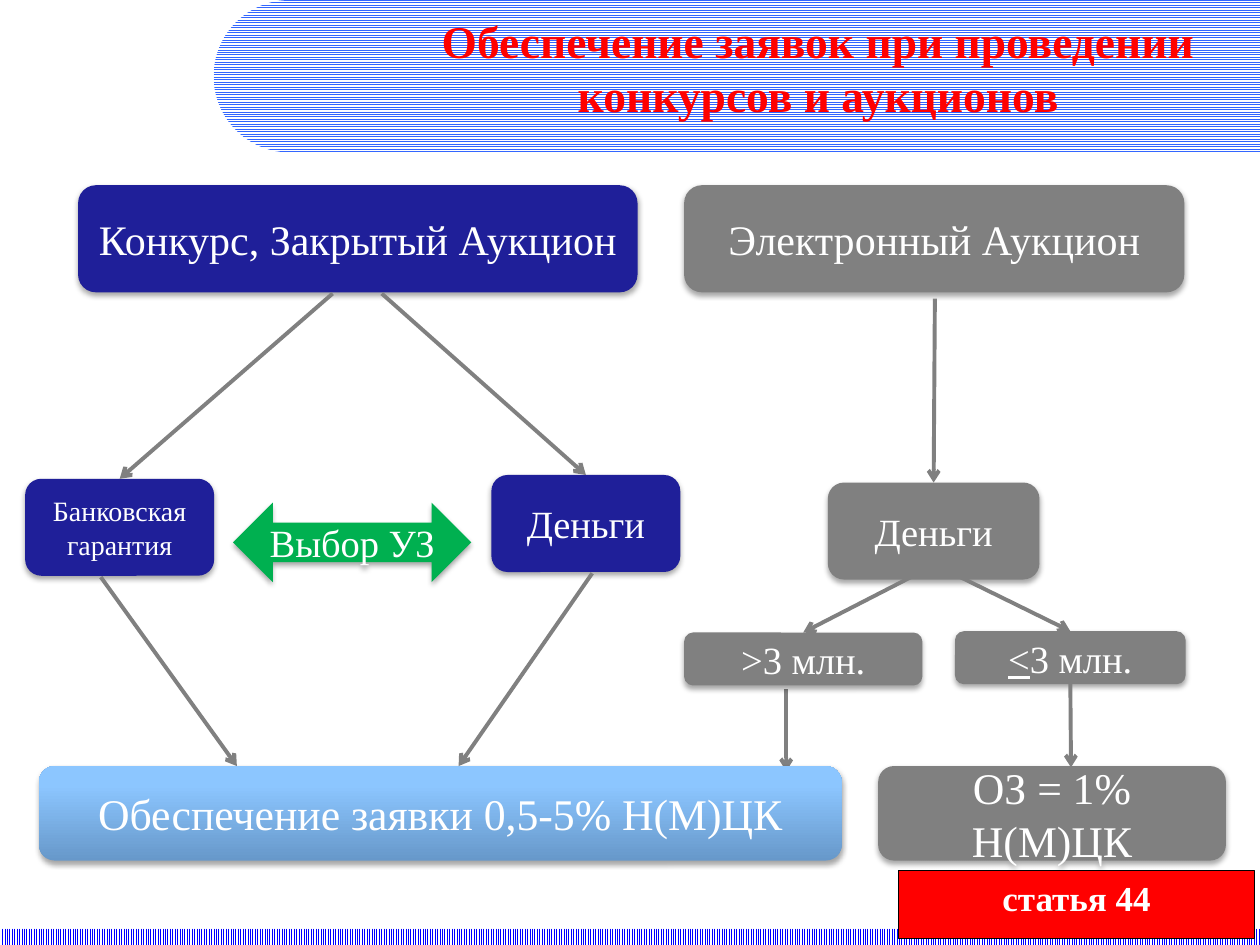
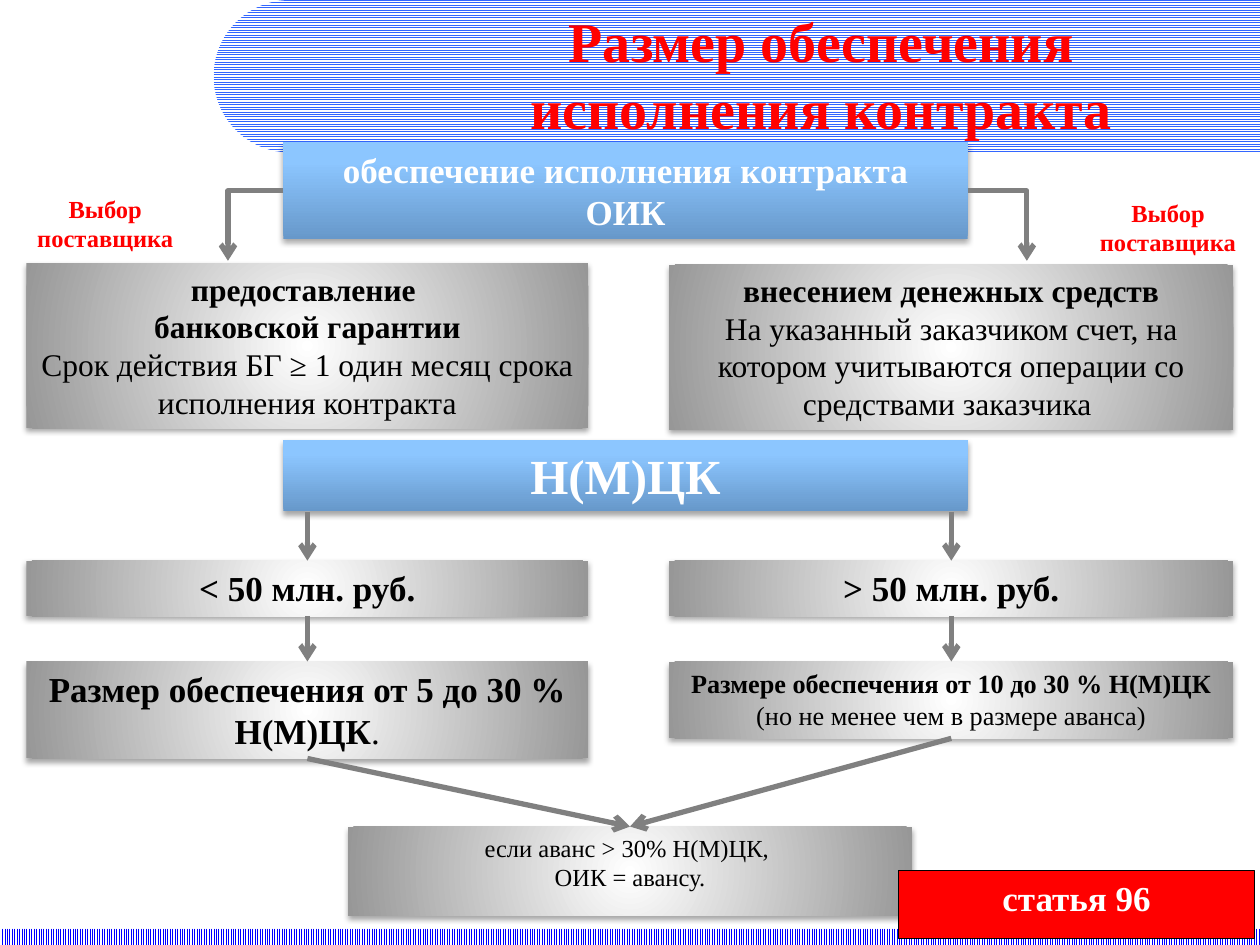
from math import cos, pi, sin

from lxml.etree import SubElement
from pptx import Presentation
from pptx.dml.color import RGBColor
from pptx.enum.dml import MSO_PATTERN
from pptx.enum.shapes import MSO_CONNECTOR, MSO_SHAPE
from pptx.enum.text import MSO_ANCHOR, MSO_AUTO_SIZE, PP_ALIGN
from pptx.oxml import parse_xml
from pptx.oxml.ns import nsdecls, qn
from pptx.util import Inches, Pt

FONT = "Times New Roman"
WHITE, BLACK, RED, GRAY = "FFFFFF", "000000", "FF0000", "808080"
NAVY, GREEN = "1F1F99", "00B050"
SKY = ([(0, "6798CA"), (80, "8CC6FF"), (100, "8EC7FF")], '<a:lin ang="16200000" scaled="0"/>')
SILVER = (
    [(0, WHITE), (100, "979797")],
    '<a:path path="circle"><a:fillToRect l="50000" t="50000" r="50000" b="50000"/></a:path>',
)
BOTTOM, TOP, LEFT, RIGHT = 2, 0, 1, 3


def rgb(value):
    """Turn a hex string into a colour."""
    return RGBColor.from_string(value)


def write(frame, paragraphs, size=20, color=WHITE, bold=False, anchor=MSO_ANCHOR.TOP):
    """Fill a text frame; a paragraph is a string or a list of (text, font changes)."""
    frame.word_wrap = True
    frame.auto_size = MSO_AUTO_SIZE.NONE
    frame.vertical_anchor = anchor
    for index, content in enumerate(paragraphs):
        para = frame.paragraphs[0] if index == 0 else frame.add_paragraph()
        para.alignment = PP_ALIGN.CENTER
        spans = [(content, {})] if isinstance(content, str) else content
        for text, changes in spans:
            span = para.add_run()
            span.text = text
            span.font.name = FONT
            span.font.size = Pt(size)
            span.font.color.rgb = rgb(color)
            span.font.bold = changes.get("bold", bold)
            span.font.underline = changes.get("underline", False)


class Painter:
    """Holds the deck, its style and the slide being drawn."""

    def __init__(self):
        """Open an empty deck of the right size."""
        self.deck = Presentation()
        self.deck.slide_width = Inches(10)
        self.deck.slide_height = Inches(7.5)
        self.page = None
        self.line_width = Pt(3)

    def new_page(self, title, place, size, line_width):
        """Start a slide with its bands and title."""
        self.page = self.deck.slides.add_slide(self.deck.slide_layouts[5])
        self.line_width = Pt(line_width)
        self.bands()
        heading = self.page.shapes.title
        heading.left, heading.top, heading.width, heading.height = map(Inches, place)
        write(heading.text_frame, [title], size=size, color=RED, bold=True)
        heading.element.getparent().append(heading.element)

    def bands(self):
        """Draw the rounded top band and the bottom strip."""
        radius, center, steps = 0.605, 2.3, 48
        angles = [pi * step / steps for step in range(steps + 1)]
        arc = [(center - radius * sin(a), radius - radius * cos(a)) for a in angles]
        builder = self.page.shapes.build_freeform(Inches(10), 0)
        builder.add_line_segments(
            [(Inches(x), Inches(y)) for x, y in arc + [(10, 2 * radius)]], close=True
        )
        self.hatch(builder.convert_to_shape(), MSO_PATTERN.NARROW_HORIZONTAL, "3366FF")
        strip = self.page.shapes.add_shape(
            MSO_SHAPE.RECTANGLE, 0, Inches(7.37), Inches(10), Inches(0.13)
        )
        self.hatch(strip, MSO_PATTERN.NARROW_VERTICAL, "0000FF")

    def hatch(self, shape, pattern, color):
        """Give a shape a line pattern on white."""
        shape.fill.patterned()
        shape.fill.pattern = pattern
        shape.fill.fore_color.rgb = rgb(color)
        shape.fill.back_color.rgb = rgb(WHITE)
        shape.line.fill.background()
        shape.shadow.inherit = False

    def gradient(self, shape, stops, direction):
        """Fill a shape with colour stops along a direction."""
        marks = "".join(
            f'<a:gs pos="{place * 1000}"><a:srgbClr val="{color}"/></a:gs>'
            for place, color in stops
        )
        shape.element.spPr.insert(2, parse_xml(
            f'<a:gradFill {nsdecls("a")} rotWithShape="1">'
            f"<a:gsLst>{marks}</a:gsLst>{direction}</a:gradFill>"
        ))

    def drop_shadow(self, shape):
        """Put a soft shadow under a shape."""
        shape.element.spPr.find(qn("a:effectLst")).append(parse_xml(
            f'<a:outerShdw {nsdecls("a")} blurRad="40000" dist="23000" dir="5400000" '
            'rotWithShape="0"><a:srgbClr val="000000"><a:alpha val="35000"/>'
            "</a:srgbClr></a:outerShdw>"
        ))

    def box(self, place, paragraphs, fill, kind=MSO_SHAPE.RECTANGLE, border=None, **style):
        """Draw a filled shape with text and return it."""
        shape = self.page.shapes.add_shape(kind, *map(Inches, place))
        shape.shadow.inherit = False
        if isinstance(fill, str):
            shape.fill.solid()
            shape.fill.fore_color.rgb = rgb(fill)
        else:
            self.gradient(shape, *fill)
        if border:
            shape.line.color.rgb = rgb(border)
            shape.line.width = Pt(0.75)
        else:
            shape.line.fill.background()
            self.drop_shadow(shape)
        write(shape.text_frame, paragraphs, **style)
        return shape

    def round_box(self, place, content, fill, size=22, kind=MSO_SHAPE.ROUNDED_RECTANGLE):
        """Draw a rounded box with one centred paragraph."""
        return self.box(place, [content], fill, kind, size=size, anchor=MSO_ANCHOR.MIDDLE)

    def label(self, place, text):
        """Add a small red caption."""
        caption = self.page.shapes.add_textbox(*map(Inches, place))
        write(caption.text_frame, [text], size=14, color=RED, bold=True)

    def arrow(self, start, end, side=BOTTOM, bent=False):
        """Draw an arrow; each end is a point or a box to join."""
        ends = [point if isinstance(point, tuple) else (0, 0) for point in (start, end)]
        kind = MSO_CONNECTOR.ELBOW if bent else MSO_CONNECTOR.STRAIGHT
        line = self.page.shapes.add_connector(kind, *map(Inches, ends[0] + ends[1]))
        if not isinstance(start, tuple):
            line.begin_connect(start, side)
        if not isinstance(end, tuple):
            line.end_connect(end, TOP)
        properties = line.element.spPr
        if bent:
            properties.find(qn("a:prstGeom")).set("prst", "bentConnector2")
        line.line.color.rgb = rgb(GRAY)
        line.line.width = self.line_width
        SubElement(properties.find(qn("a:ln")), qn("a:tailEnd"), type="arrow")
        SubElement(properties, qn("a:effectLst"))

    def article(self, number):
        """Add the red article tag in the corner."""
        self.box((7.13, 6.91, 2.83, 0.54), [f"статья {number}"], RED, border=BLACK, bold=True)


def draw_bid_security(painter):
    """Draw the slide on bid security."""
    painter.new_page(
        "Обеспечение заявок при проведении конкурсов и аукционов", (3.11, 0.05, 6.77, 0.98), 26, 2.25
    )
    painter.round_box(
        (1.85, 3.99, 1.89, 0.63), "Выбор УЗ", GREEN, kind=MSO_SHAPE.LEFT_RIGHT_ARROW
    )
    painter.arrow((6.24, 5.47), (6.24, 6.12))
    painter.round_box((0.62, 1.47, 4.44, 0.85), "Конкурс, Закрытый Аукцион", NAVY, 24)
    painter.round_box((5.43, 1.47, 3.97, 0.85), "Электронный Аукцион", GRAY, 24)
    guarantee = painter.round_box((0.2, 3.8, 1.5, 0.77), "Банковская гарантия", NAVY, 16)
    tender_money = painter.round_box((3.9, 3.77, 1.5, 0.77), "Деньги", NAVY)
    painter.round_box((0.31, 6.08, 6.37, 0.75), "Обеспечение заявки 0,5-5% Н(М)ЦК", SKY, 25)
    painter.round_box((6.97, 6.08, 2.76, 0.75), "ОЗ = 1% Н(М)ЦК", GRAY, 25)
    above_limit = painter.round_box((5.43, 5.02, 1.89, 0.42), ">3 млн.", GRAY)
    within_limit = painter.round_box(
        (7.58, 5.01, 1.83, 0.42), [("<", {"underline": True}), ("3 млн.", {})], GRAY
    )
    auction_money = painter.round_box((6.57, 3.83, 1.68, 0.77), "Деньги", GRAY)
    for start, end in (
        (within_limit, (8.5, 6.09)),
        ((7.42, 2.37), auction_money),
        ((2.64, 2.33), guarantee),
        ((3.03, 2.33), tender_money),
        ((7.58, 4.56), within_limit),
        ((7.27, 4.56), above_limit),
        ((4.7, 4.55), (3.64, 6.08)),
        ((0.8, 4.58), (1.88, 6.08)),
    ):
        painter.arrow(start, end)
    painter.article(44)


def draw_contract_security(painter):
    """Draw the slide on the size of contract security."""
    painter.new_page("Размер обеспечения исполнения контракта", (3.24, 0, 6.56, 0.99), 32, 3)
    plain = {"bold": False}
    dark = {"color": BLACK, "bold": True}
    left, right = (0.21, 4.46), (5.31, 4.48)

    def column_box(column, top, height, paragraphs, size):
        """Draw a silver box in one of the two columns."""
        x, width = column
        return painter.box((x, top, width, height), paragraphs, SILVER, size=size, **dark)

    security = painter.box(
        (2.25, 1.13, 5.43, 0.77), ["обеспечение исполнения контракта", "ОИК"], SKY, bold=True
    )
    advance = painter.box(
        (2.76, 6.56, 4.48, 0.71), ["если аванс > 30% Н(М)ЦК, ", "ОИК = авансу."],
        SILVER, size=14, color=BLACK,
    )
    painter.box((2.25, 3.49, 5.43, 0.57), ["Н(М)ЦК"], SKY, size=28, bold=True)
    below = column_box(left, 4.45, 0.44, ["< 50 млн. руб."], 20)
    above = column_box(right, 4.45, 0.44, ["> 50 млн. руб."], 20)
    below_size = column_box(
        left, 5.25, 0.77, [[("Размер обеспечения от 5 до 30 % Н(М)ЦК", {}), (".", plain)]], 20
    )
    above_size = column_box(right, 5.25, 0.61, [[
        ("Размере обеспечения от 10 до 30 % Н(М)ЦК ", {}),
        ("(но не менее чем в размере аванса)", plain),
    ]], 15)
    column_box(left, 2.09, 1.31, [
        "предоставление ",
        "банковской гарантии",
        [("Срок действия БГ ≥ 1 один месяц срока исполнения контракта", plain)],
    ], 18)
    column_box(right, 2.1, 1.31, [
        "внесением денежных средств",
        [("На указанный заказчиком счет, на котором учитываются операции со "
          "средствами заказчика ", plain)],
    ], 18)
    painter.arrow(security, (8.15, 2.07), side=RIGHT, bent=True)
    painter.arrow(security, (1.81, 2.07), side=LEFT, bent=True)
    for x, limit, amount in ((2.44, below, below_size), (7.55, above, above_size)):
        painter.arrow((x, 4.06), limit)
        painter.arrow(limit, amount)
        painter.arrow(amount, advance)
    painter.label((8.54, 1.52, 1.46, 0.57), "Выбор поставщика")
    painter.label((0.14, 1.49, 1.39, 0.57), "Выбор поставщика")
    painter.article(96)


def main():
    """Build and save the deck."""
    painter = Painter()
    draw_bid_security(painter)
    draw_contract_security(painter)
    painter.deck.save("out.pptx")


if __name__ == "__main__":
    main()
